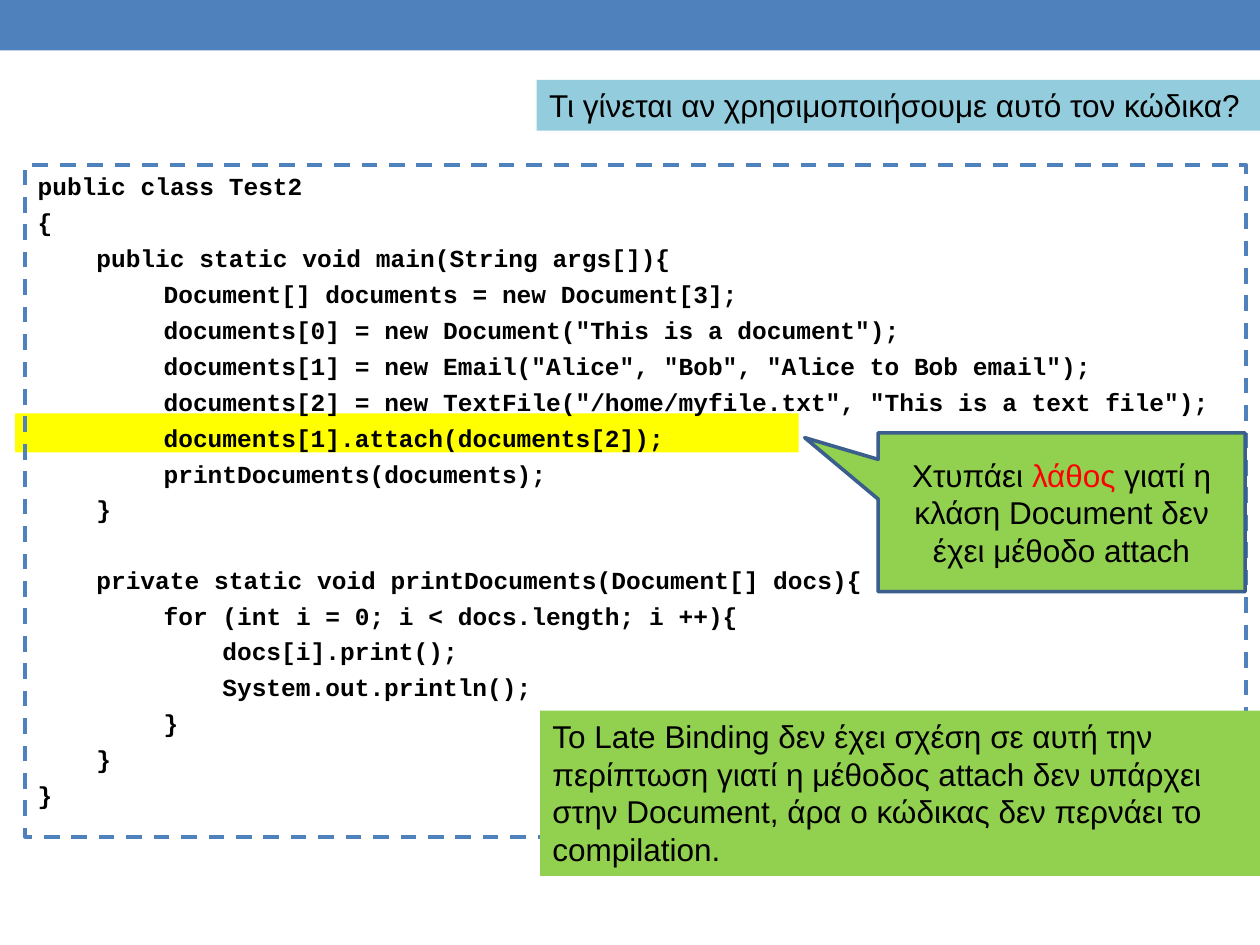
"""Build a slide on why calling a missing method fails at compilation."""
from pptx import Presentation
from pptx import util as u
from pptx.dml import color
from pptx.enum import dml, shapes, text

COLOURS = {
    "blue": "4F81BD", "yellow": "FFFF00", "sky": "93CDDD", "green": "92D050",
    "navy": "3A5F8C", "black": "000000", "red": "FF0000",
}
LEVEL_INDENTS = (0, 33.6, 72, 105.6)
LINE_GAP = 3.7
SECTION_GAP = 23.3
CODE = (
    (0, "public class Test2"),
    (0, "{"),
    (1, "public static void main(String args[]){"),
    (2, "Document[] documents = new Document[3];"),
    (2, 'documents[0] = new Document("This is a document");'),
    (2, 'documents[1] = new Email("Alice", "Bob", "Alice to Bob email");'),
    (2, 'documents[2] = new TextFile("/home/myfile.txt", "This is a text file");'),
    (2, "documents[1].attach(documents[2]);"),
    (2, "printDocuments(documents);"),
    (1, "}"),
    (1, "private static void printDocuments(Document[] docs){"),
    (2, "for (int i = 0; i < docs.length; i ++){"),
    (3, "docs[i].print();"),
    (3, "System.out.println();"),
    (2, "}"),
    (1, "}"),
    (0, "}"),
)


class Painter:
    """Hold the text style and the current page."""

    def __init__(self, page, font="Arial", size=18):
        self.page, self.font, self.size = page, font, size

    def colour(self, name):
        """Look up a colour by name."""
        return color.RGBColor.from_string(COLOURS[name])

    def box(self, area, fill=None, line=None, width=1, kind=shapes.MSO_SHAPE.RECTANGLE):
        """Add a preset shape with an optional fill and outline."""
        box = self.page.shapes.add_shape(kind, *map(u.Pt, area))
        box.shadow.inherit = False
        if fill:
            box.fill.solid()
            box.fill.fore_color.rgb = self.colour(fill)
        else:
            box.fill.background()
        if line:
            box.line.color.rgb = self.colour(line)
            box.line.width = u.Pt(width)
        else:
            box.line.fill.background()
        return box

    def span(self, para, words, colour="black", font=None, size=None, bold=False):
        """Add one styled run."""
        span = para.add_run()
        span.text = words
        span.font.name = font or self.font
        span.font.size = u.Pt(size or self.size)
        span.font.bold = bold
        span.font.color.rgb = self.colour(colour)

    def label(self, box, spans, align=text.PP_ALIGN.LEFT, anchor=text.MSO_ANCHOR.TOP, wrap=True):
        """Fill a box with one paragraph of (words, colour) spans."""
        frame = box.text_frame
        frame.word_wrap = wrap
        frame.vertical_anchor = anchor
        para = frame.paragraphs[0]
        para.alignment = align
        for words, colour in spans:
            self.span(para, words, colour)

    def code(self, box, lines):
        """Fill a box with indented code, with a gap before each private method."""
        frame = box.text_frame
        frame.word_wrap = True
        frame.vertical_anchor = text.MSO_ANCHOR.TOP
        for index, (level, words) in enumerate(lines):
            para = frame.add_paragraph() if index else frame.paragraphs[0]
            para.alignment = text.PP_ALIGN.LEFT
            para.space_before = u.Pt(SECTION_GAP if words.startswith("private") else LINE_GAP)
            para._p.get_or_add_pPr().set("marL", str(int(u.Pt(LEVEL_INDENTS[level]))))
            self.span(para, words, font="Courier New", size=14, bold=True)


def main():
    """Build and save the deck."""
    deck = Presentation()
    deck.slide_width, deck.slide_height = u.Pt(720), u.Pt(540)
    painter = Painter(deck.slides.add_slide(deck.slide_layouts[6]))

    painter.box((0, 0, 720, 28.8), "blue")
    painter.box((8.6, 236.2, 447.8, 22.3), "yellow")

    listing = painter.box((14.4, 94.3, 697.7, 383.8), line="blue", width=2.25)
    listing.line.dash_style = dml.MSO_LINE.DASH
    painter.code(listing, CODE)

    question = painter.box((306.7, 45.6, 413.3, 29.1), "sky")
    painter.label(question, [("Τι γίνεται αν χρησιμοποιήσουμε αυτό τον κώδικα?", "black")], wrap=False)

    callout = painter.box((501.8, 247.4, 209.7, 90.7), "green", "navy", 2.08,
                          shapes.MSO_SHAPE.RECTANGULAR_CALLOUT)
    callout.adjustments[0], callout.adjustments[1] = -0.7, -0.47
    painter.label(callout, [
        ("Χτυπάει ", "black"),
        ("λάθος", "red"),
        (" γιατί η κλάση Document δεν έχει μέθοδο attach", "black"),
    ], text.PP_ALIGN.CENTER, text.MSO_ANCHOR.MIDDLE)

    conclusion = painter.box((308.6, 406.1, 411.8, 94.5), "green")
    painter.label(conclusion, [(
        "Το Late Binding δεν έχει σχέση σε αυτή την περίπτωση γιατί η μέθοδος attach "
        "δεν υπάρχει στην Document, άρα ο κώδικας δεν περνάει το compilation.", "black")])

    deck.save("out.pptx")


if __name__ == "__main__":
    main()
